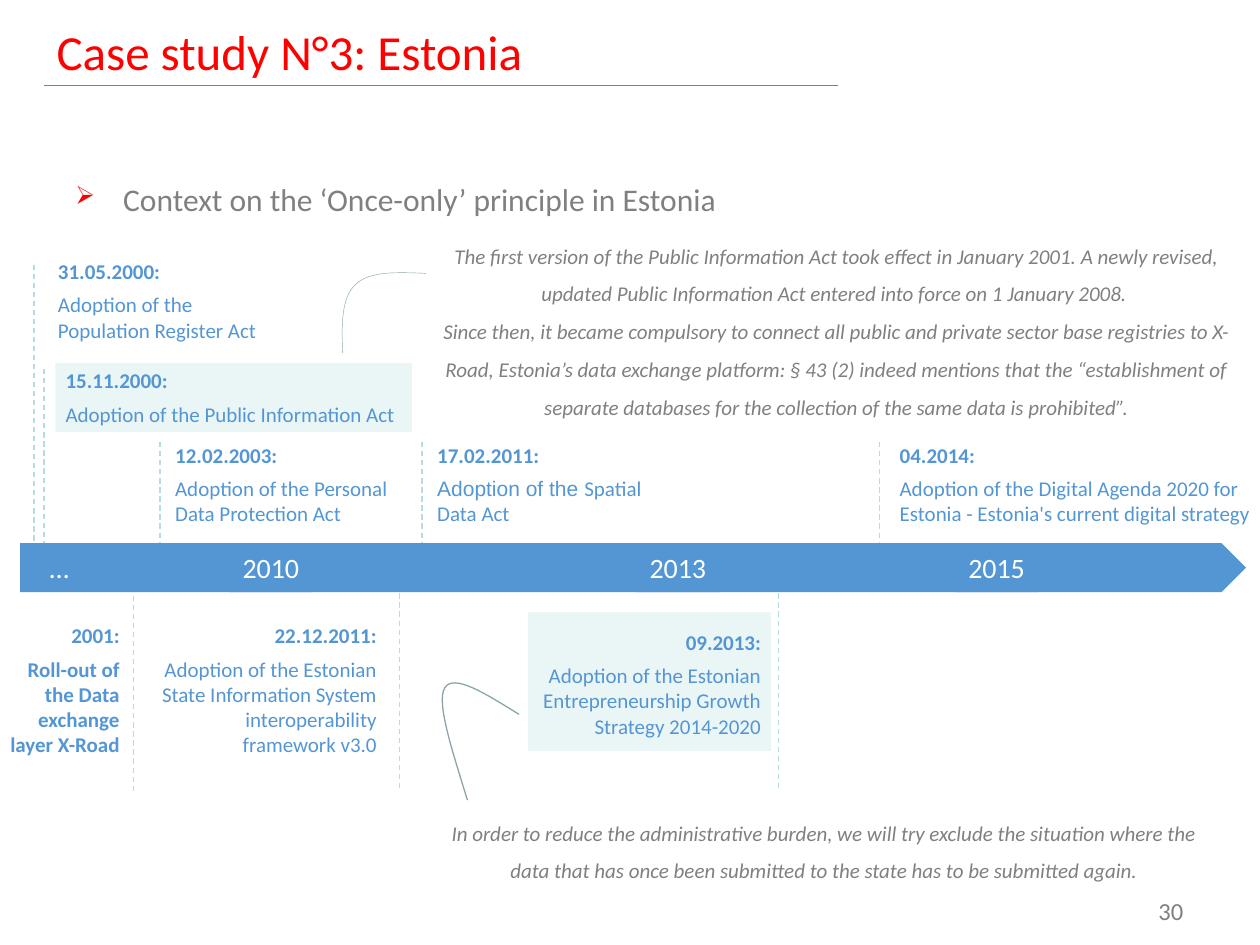
from lxml import etree
from pptx import Presentation
from pptx.dml.color import RGBColor
from pptx.enum.dml import MSO_LINE
from pptx.enum.shapes import MSO_CONNECTOR, MSO_SHAPE
from pptx.enum.text import MSO_ANCHOR, MSO_AUTO_SIZE, PP_ALIGN
from pptx.oxml.ns import qn
from pptx.util import Inches, Pt

LEFT, CENTER, RIGHT = PP_ALIGN.LEFT, PP_ALIGN.CENTER, PP_ALIGN.RIGHT
TOP, MIDDLE, BOTTOM = MSO_ANCHOR.TOP, MSO_ANCHOR.MIDDLE, MSO_ANCHOR.BOTTOM
NO_FIT = MSO_AUTO_SIZE.NONE
STRAIGHT, DASH = MSO_CONNECTOR.STRAIGHT, MSO_LINE.DASH
RECT, ARROW = MSO_SHAPE.RECTANGLE, MSO_SHAPE.PENTAGON

FONT = "Calibri"
BLUE, GREY, RED, WHITE = "5496D4", "808080", "FF0000", "FFFFFF"
PALE, DASH_TEAL, CURVE_TEAL = "EAF5F6", "B6DCDF", "8AA6A8"
BAR_TOP, BAR_HEIGHT = 4.31, 0.39

HIGHLIGHTS = [(0.44, 2.88, 2.83, 0.55), (4.19, 4.86, 1.93, 1.1)]
YEARS = [("2010", 1.82), ("2013", 5.05), ("2015", 7.58)]
DASHES = [
    (0.27, 2.1, BAR_TOP), (0.35, 2.93, BAR_TOP), (1.27, 3.51, BAR_TOP),
    (3.35, 3.51, BAR_TOP), (6.98, 3.51, BAR_TOP),
    (1.06, 4.73, 6.28), (3.17, 4.71, 6.28), (6.18, 4.71, 6.28),
]
EVENTS = [
    ((0.34, 2.05, 1.9, 0.87), "31.05.2000:",
     [("Adoption of the Population Register Act", FONT)], LEFT, TOP, False),
    ((0.4, 2.92, 2.88, 0.87), "15.11.2000:",
     [("Adoption of the Public Information Act", FONT)], LEFT, TOP, False),
    ((1.27, 3.51, 1.99, 0.87), "12.02.2003:",
     [("Adoption of the Personal Data Protection Act", FONT)], LEFT, TOP, False),
    ((3.35, 3.51, 1.81, 0.8), "17.02.2011:",
     [("Adoption of the ", "Arial"), ("Spatial Data Act", FONT)], LEFT, TOP, False),
    ((7.02, 3.51, 2.98, 0.87), "04.2014:",
     [("Adoption of the Digital Agenda 2020 for Estonia - Estonia's current digital strategy",
       FONT)], LEFT, TOP, False),
    ((-0.12, 4.94, 1.07, 1.42), "2001:",
     [("Roll-out of the Data exchange layer X-Road", FONT)], RIGHT, TOP, True),
    ((1.1, 4.94, 1.89, 1.02), "22.12.2011:",
     [("Adoption of the Estonian State Information System interoperability framework v3.0",
       FONT)], RIGHT, TOP, False),
    ((3.97, 4.91, 2.07, 0.95), "09.2013:",
     [("Adoption of the Estonian Entrepreneurship Growth Strategy 2014-2020", FONT)],
     RIGHT, BOTTOM, False),
]
NOTES = [
    ((3.39, 1.78, 6.5, 1.62), [
        "The first version of the Public Information Act took effect in January 2001. "
        "A newly revised,",
        "updated Public Information Act entered into force on 1 January 2008. ",
        "Since then, it became compulsory to connect all public and private sector base "
        "registries to X-Road, Estonia’s data exchange platform: § 43 (2) indeed mentions "
        "that the “establishment of separate databases for the collection of the same data "
        "is prohibited”."]),
    ((3.35, 6.36, 6.38, 0.71), [
        "In order to reduce the administrative burden, we will try exclude the situation "
        "where the data that has once been submitted to the state has to be submitted "
        "again."]),
]
CURVES = [
    ([(2.72, 2.8), (2.71, 2.58), (2.71, 2.36), (2.82, 2.26),
      (2.93, 2.15), (3.15, 2.16), (3.38, 2.17)], 0.25),
    ([(4.12, 5.67), (3.86, 5.51), (3.6, 5.34), (3.53, 5.46),
      (3.46, 5.57), (3.59, 5.96), (3.71, 6.35)], 0.75),
]


def rgb(color):
    """Turn a hex string into a colour."""
    return RGBColor.from_string(color)


def add_run(p, text, size, color, font=FONT, bold=False, italic=False):
    """Append one formatted run."""
    r = p.add_run()
    r.text = text
    r.font.name, r.font.size = font, Pt(size)
    r.font.bold, r.font.italic = bold, italic
    r.font.color.rgb = rgb(color)


def set_frame(tf, anchor=TOP, insets=None, wrap=True):
    """Set wrapping, anchor and insets of a text frame."""
    tf.word_wrap, tf.auto_size, tf.vertical_anchor = wrap, NO_FIT, anchor
    if insets:
        tf.margin_left, tf.margin_top, tf.margin_right, tf.margin_bottom = map(Inches, insets)
    return tf


def add_text(s, box, **frame):
    """Add a text box and return its frame."""
    return set_frame(s.shapes.add_textbox(*map(Inches, box)).text_frame, **frame)


def add_block(s, kind, box, color):
    """Add a plain filled shape."""
    sp = s.shapes.add_shape(kind, *map(Inches, box))
    sp.shadow.inherit = False
    sp.fill.solid()
    sp.fill.fore_color.rgb = rgb(color)
    sp.line.fill.background()
    return sp


def add_line(s, start, end, color, dash=None):
    """Add a thin straight line."""
    sp = s.shapes.add_connector(STRAIGHT, *map(Inches, start + end))
    sp.line.color.rgb, sp.line.width = rgb(color), Pt(0.75)
    if dash:
        sp.line.dash_style = dash
    etree.SubElement(sp._element.spPr, qn("a:effectLst"))


def bezier(a, b, c, d, steps=16):
    """Return points along a cubic curve, without its start."""
    ts = [i / steps for i in range(1, steps + 1)]
    return [tuple((1 - t) ** 3 * w + 3 * t * (1 - t) ** 2 * x + 3 * t * t * (1 - t) * y
                  + t ** 3 * z for w, x, y, z in zip(a, b, c, d)) for t in ts]


def add_curve(s, knots, width):
    """Draw an open curve through consecutive cubic segments."""
    points = [pt for i in range(0, len(knots) - 1, 3) for pt in bezier(*knots[i:i + 4])]
    builder = s.shapes.build_freeform(*map(Inches, knots[0]))
    builder.add_line_segments([(Inches(x), Inches(y)) for x, y in points], close=False)
    sp = builder.convert_to_shape()
    sp.shadow.inherit = False
    sp.fill.background()
    sp.line.color.rgb, sp.line.width = rgb(CURVE_TEAL), Pt(width)


def add_title(s, text):
    """Place and fill the title with the rule below it."""
    sp = s.shapes.title
    sp.left, sp.top, sp.width, sp.height = map(Inches, (0.35, 0.13, 6.3, 0.55))
    p = set_frame(sp.text_frame, anchor=MIDDLE).paragraphs[0]
    p.alignment = LEFT
    add_run(p, text, 28, RED)
    add_line(s, (6.65, 0.68), (0.35, 0.68), GREY)


def add_bullet(s, box, text):
    """Add a line of text with a red arrow bullet."""
    p = add_text(s, box).paragraphs[0]
    pPr = p._p.get_or_add_pPr()
    pPr.set("marL", str(Inches(0.38)))
    pPr.set("indent", str(Inches(-0.38)))
    color = etree.SubElement(pPr, qn("a:buClr"))
    etree.SubElement(color, qn("a:srgbClr"), val=RED)
    etree.SubElement(pPr, qn("a:buSzPct"), val="80000")
    etree.SubElement(pPr, qn("a:buChar"), char="➢")
    add_run(p, text, 18, GREY)


def add_event(s, box, date, parts, align, anchor, bold):
    """Add a dated event with its description."""
    tf = add_text(s, box, anchor=anchor, insets=(0.12, 0, 0, 0))
    p = tf.paragraphs[0]
    p.alignment, p.space_after = align, Pt(4.8)
    add_run(p, date, 12, BLUE, bold=True)
    p = tf.add_paragraph()
    p.alignment = align
    for text, font in parts:
        add_run(p, text, 12, BLUE, font, bold)


def add_note(s, box, lines):
    """Add a centred italic comment."""
    tf = add_text(s, box)
    for i, line in enumerate(lines):
        p = tf.add_paragraph() if i else tf.paragraphs[0]
        p.alignment, p.line_spacing = CENTER, 1.5
        add_run(p, line, 12, GREY, italic=True)


def add_bar_label(tf, text):
    """Write a centred white label on the time bar."""
    p = set_frame(tf, MIDDLE, (0, 0, 0, 0), wrap=False).paragraphs[0]
    p.alignment = CENTER
    add_run(p, text, 16, WHITE)


def main():
    """Build the timeline slide."""
    prs = Presentation()
    prs.slide_width, prs.slide_height = Inches(10), Inches(7.5)
    s = prs.slides.add_slide(prs.slide_layouts[5])
    for box in HIGHLIGHTS:
        add_block(s, RECT, box, PALE)
    add_title(s, "Case study N°3: Estonia")
    add_bullet(s, (0.5, 1.38, 9, 0.4), "Context on the ‘Once-only’ principle in Estonia")
    add_block(s, ARROW, (0.16, BAR_TOP, 9.73, BAR_HEIGHT), BLUE)
    for year, left in YEARS:
        sp = add_block(s, RECT, (left, BAR_TOP, 0.66, BAR_HEIGHT), BLUE)
        add_bar_label(sp.text_frame, year)
    add_bar_label(add_text(s, (0.28, BAR_TOP, 0.38, BAR_HEIGHT)), "…")
    for x, top, bottom in DASHES:
        add_line(s, (x, top), (x, bottom), DASH_TEAL, DASH)
    for event in EVENTS:
        add_event(s, *event)
    for note in NOTES:
        add_note(s, *note)
    for curve in CURVES:
        add_curve(s, *curve)
    p = add_text(s, (8.78, 7.06, 0.71, 0.4)).paragraphs[0]
    p.alignment = RIGHT
    add_run(p, "30", 14, GREY)
    prs.save("out.pptx")


if __name__ == "__main__":
    main()
